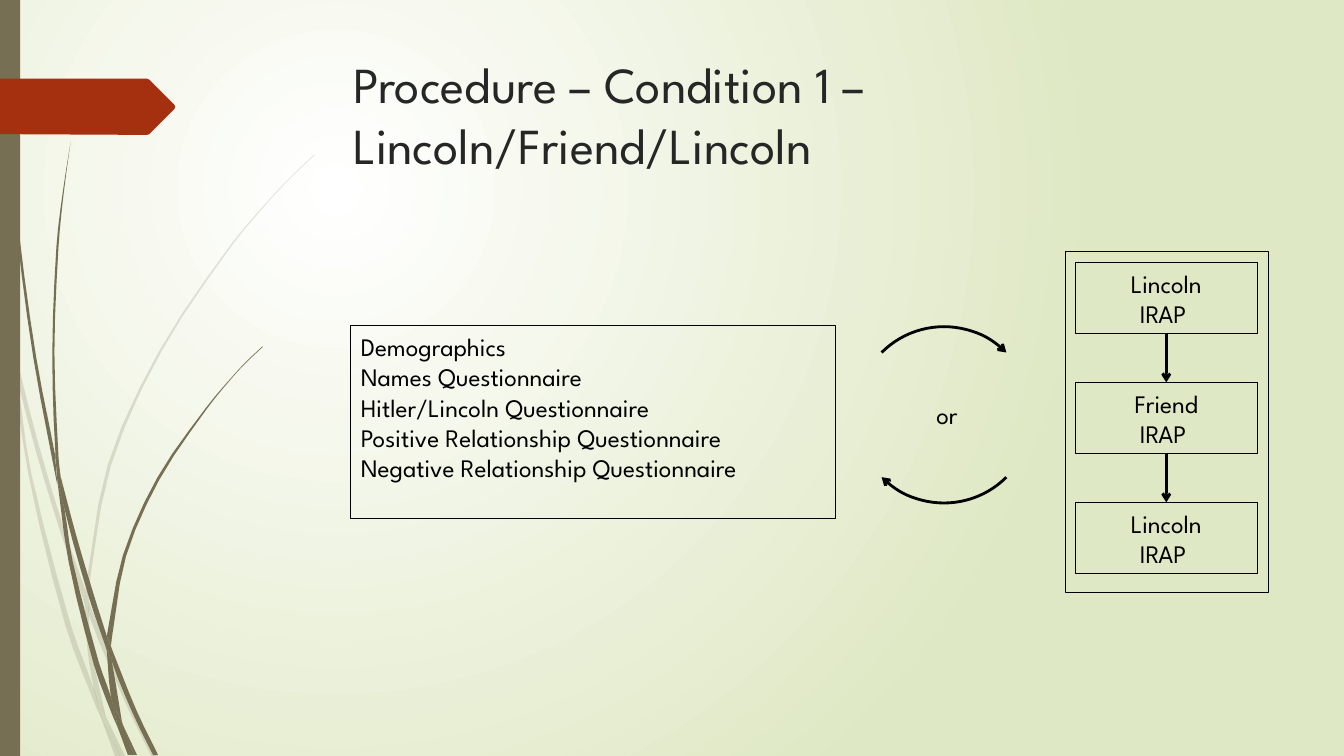
from dataclasses import dataclass
from math import dist

from lxml.etree import SubElement
from pptx import Presentation
from pptx.dml.color import RGBColor
from pptx.enum.shapes import MSO_CONNECTOR, MSO_SHAPE
from pptx.enum.text import MSO_ANCHOR, PP_ALIGN
from pptx.oxml import parse_xml
from pptx.oxml.ns import nsdecls, qn
from pptx.shapes.autoshape import Shape
from pptx.slide import Slide
from pptx.text.text import TextFrame
from pptx.util import Pt

FONT = "League Spartan"
BLACK, OLIVE, RED = "000000", "766F54", "A53010"
Point = tuple[float, float]
Edge = list[Point]


@dataclass
class Area:
    left: float
    top: float
    width: float
    height: float


@dataclass
class Grass:
    """Blades of one opacity, each closed from smooth edges."""
    opacity: int
    blades: list[list[Edge]]


PALE_GRASS = Grass(20, [
    [[(7.9, 252), (6.5, 231.8), (0, 203)], [(0, 215.3), (7.2, 247.7), (7.9, 252)]],
    [[(12.2, 270.7), (25.9, 323.3), (41.8, 375.8), (60.5, 431.3)],
     [(61.2, 421.9), (44.6, 374.4), (26, 311.8), (10.1, 248.4)]],
    [[(63.4, 429.1), (63.4, 439.2), (88.6, 499.7), (108, 540)],
     [(111.6, 540), (91.4, 498.2), (66.2, 437), (63.4, 429.1)]],
    [[(85.7, 540), (89.3, 540)], [(75.6, 511.9)]],
    [[(7.9, 252), (12.2, 270.7), (22.3, 337.7), (50.4, 445.7), (67, 491.8), (71.3, 509),
      (72.7, 514.1)],
     [(72.7, 514.1), (66.2, 499), (46.8, 447.1), (20.2, 338.4), (7.9, 252)]],
    [[(60.5, 431.3), (62.6, 465.1), (67, 491.8), (69.1, 498.2), (75.6, 511.9)],
     [(75.6, 511.9), (65.5, 465.1), (63.4, 439.2)], [(63.4, 437.8), (60.5, 431.3)]],
    [[(63.4, 429.1), (63.4, 420.5), (79.2, 332.6), (115.2, 251.3), (164.9, 176.4),
      (193, 142.6), (208.8, 126), (224.6, 110.9)],
     [(224.6, 110.2), (208.1, 126), (193, 141.8), (164.2, 175.7), (113.8, 250.6),
      (77, 331.9), (61.2, 420.5), (61.2, 421.9)]],
    [[(72.7, 514.1), (82.1, 540)], [(85.7, 540)]],
    [[(63.4, 437.8), (63.4, 439.2)], [(63.4, 429.1), (61.2, 421.9)], [(60.5, 431.3)]],
    [[(67, 491.8), (71.3, 509), (72.7, 514.1), (85.7, 540)], [(75.6, 511.9), (69.1, 498.2)]],
])
DARK_GRASS = Grass(100, [
    [[(2.2, 0), (2.9, 34.6), (5, 79.2), (12.2, 167.8), (23.8, 255.6), (40.3, 343.4),
      (41, 346.3)],
     [(39.6, 329), (39.6, 326.2), (25.9, 255.6), (13.7, 167), (5.8, 78.5), (3.6, 34.6),
      (2.9, 0)]],
    [[(43.2, 339.8), (46.1, 363.6), (63.4, 426.2), (76.3, 464.4)],
     [(76.3, 454.3), (67, 424.8), (54.4, 382.3), (43.2, 339.8)]],
    [[(79.2, 461.5), (79.9, 472.3), (95, 509.8), (109.4, 539.3)],
     [(113, 539.3), (97.9, 508.3), (81.4, 467.3), (79.2, 461.5)]],
    [[(41, 343.4), (46.1, 363.6), (51.8, 400.3), (70.6, 473), (79.2, 497.5), (83.5, 516.2),
      (84.2, 519.8)],
     [(84.2, 519.8), (79.9, 509.8), (67, 474.5), (49, 401), (41, 343.4)]],
    [[(43.2, 339.8), (41.8, 326.2), (38.9, 251.3), (41.8, 176.4), (45.4, 139), (50.4, 101.5)],
     [(50.4, 101.5), (44.6, 139), (40.3, 176.4), (37.4, 251.3), (39.6, 323.3),
      (43.2, 339.8)]],
    [[(95.8, 539.3), (97.9, 539.3)], [(87.8, 517.7)]],
    [[(41, 343.4), (46.1, 363.6)], [(43.2, 339.8), (39.6, 323.3)], [(39.6, 326.2)]],
    [[(79.9, 455.8), (90, 397.4), (113.8, 342.7), (147.6, 292.3), (166.3, 269.3),
      (176.4, 258.5), (187.9, 247.7)],
     [(187.2, 247.7), (176.4, 257.8), (166.3, 268.6), (146.9, 291.6), (112.3, 341.3),
      (87.8, 396.7), (76.3, 454.3)], [(79.2, 461.5)]],
    [[(84.2, 519.8), (91.4, 539.3)], [(94.3, 539.3)]],
    [[(76.3, 464.4), (79.2, 497.5), (83.5, 508.3), (87.8, 517.7)],
     [(87.1, 515.5), (79.9, 472.3), (78.5, 468.7), (76.3, 464.4)]],
    [[(76.3, 464.4), (78.5, 468.7)], [(79.9, 472.3), (79.2, 461.5)], [(76.3, 454.3)]],
    [[(79.2, 497.5), (83.5, 516.2), (84.2, 519.8), (93.6, 539.3)],
     [(95.8, 539.3), (87.8, 517.7), (83.5, 508.3)]],
])
PENNANT = [(0, 56.2), (97.9, 56.2), (105.1, 56.2), (106.6, 56.9), (124.6, 74.9), (125.3, 76.3),
           (124.6, 77.8), (106.6, 95.8), (105.1, 96.3), (97.9, 96.3), (0, 95.8)]
QUESTIONNAIRES = ["Demographics", "Names Questionnaire", "Hitler/Lincoln Questionnaire",
                  "Positive Relationship Questionnaire", "Negative Relationship Questionnaire"]
IRAP_ORDER = ["Lincoln", "Friend", "Lincoln"]
FIRST_IRAP, IRAP_STEP = Area(767.9, 187.4, 130.4, 51.1), 85.7


def color(code: str) -> RGBColor:
    return RGBColor.from_string(code)


def smooth(edge: Edge, steps: int = 3) -> Edge:
    """Run a curve through the points, its slopes weighted by distance."""
    if len(edge) < 3:
        return edge
    around = zip([edge[0], *edge], edge, [*edge[1:], edge[-1]])
    slopes = [[(c - a) / (dist(before, here) + dist(here, after))
               for a, c in zip(before, after)] for before, here, after in around]
    curve = [edge[0]]
    for start, end, leave, arrive in zip(edge, edge[1:], slopes, slopes[1:]):
        span = dist(start, end)
        for t in (step / steps for step in range(1, steps + 1)):
            bend = t * (1 - t) * span
            ease = t * t * (3 - 2 * t)
            curve.append(tuple(p + (q - p) * ease + bend * (m * (1 - t) - n * t)
                               for p, q, m, n in zip(start, end, leave, arrive)))
    return curve


def paint(shape: Shape, fill: str | None = None, line: str | None = None,
          weight: float = 0.75, opacity: int = 100) -> None:
    shape.shadow.inherit = False
    if fill:
        shape.fill.solid()
        shape.fill.fore_color.rgb = color(fill)
        if opacity < 100:
            tint = shape._element.spPr.find(f"{qn('a:solidFill')}/{qn('a:srgbClr')}")
            SubElement(tint, qn("a:alpha"), val=str(opacity * 1000))
    else:
        shape.fill.background()
    if line:
        shape.line.color.rgb, shape.line.width = color(line), Pt(weight)
    else:
        shape.line.fill.background()


def add_outline(page: Slide, points: Edge, fill: str, opacity: int = 100) -> None:
    corners = [(Pt(x), Pt(y)) for x, y in points]
    builder = page.shapes.build_freeform(*corners[0])
    builder.add_line_segments(corners[1:], close=True)
    paint(builder.convert_to_shape(), fill, opacity=opacity)


def add_preset(page: Slide, kind: MSO_SHAPE, area: Area) -> Shape:
    return page.shapes.add_shape(kind, Pt(area.left), Pt(area.top), Pt(area.width), Pt(area.height))


def write(frame: TextFrame, lines: list[str], size: float = 18, ink: str = BLACK,
          align: PP_ALIGN = PP_ALIGN.LEFT, wrap: bool = True) -> None:
    frame.word_wrap = wrap
    for number, line in enumerate(lines):
        para = frame.add_paragraph() if number else frame.paragraphs[0]
        para.alignment = align
        span = para.add_run()
        span.text = line
        span.font.name, span.font.size = FONT, Pt(size)
        span.font.color.rgb = color(ink)


def add_text(page: Slide, area: Area, line: str, size: float, ink: str, wrap: bool) -> None:
    box = page.shapes.add_textbox(Pt(area.left), Pt(area.top), Pt(area.width), Pt(area.height))
    write(box.text_frame, [line], size, ink, wrap=wrap)


def add_frame(page: Slide, area: Area, lines: list[str], align: PP_ALIGN = PP_ALIGN.LEFT,
              room_below: float = 3.6) -> None:
    box = add_preset(page, MSO_SHAPE.RECTANGLE, area)
    paint(box, line=BLACK)
    box.text_frame.vertical_anchor = MSO_ANCHOR.MIDDLE
    box.text_frame.margin_bottom = Pt(room_below)
    write(box.text_frame, lines, align=align)


def add_arrowhead(line) -> None:
    SubElement(line.line._get_or_add_ln(), qn("a:tailEnd"), type="arrow")


def add_down_arrow(page: Slide, x: float, top: float, bottom: float) -> None:
    arrow = page.shapes.add_connector(MSO_CONNECTOR.STRAIGHT, Pt(x), Pt(top), Pt(x), Pt(bottom))
    arrow.line.color.rgb, arrow.line.width = color(BLACK), Pt(2)
    add_arrowhead(arrow)
    SubElement(arrow._element.spPr, qn("a:effectLst"))


def set_background(page: Slide) -> None:
    fill = page.background.fill
    fill.gradient()
    for stop, code in zip(fill.gradient_stops, ["FFFFFF", "DFE8C4"]):
        stop.color.rgb = color(code)
    linear = next(page._element.iter(qn("a:lin")))
    linear.getparent().replace(linear, parse_xml(
        f'<a:path {nsdecls("a")} path="circle">'
        '<a:fillToRect l="50000" t="50000" r="100000" b="100000"/></a:path>'))


def main() -> None:
    deck = Presentation()
    deck.slide_width, deck.slide_height = Pt(960), Pt(540)
    page = deck.slides.add_slide(deck.slide_layouts[6])

    # Backdrop: gradient, grass, side bar and pennant
    set_background(page)
    for grass in (PALE_GRASS, DARK_GRASS):
        for blade in grass.blades:
            outline = [point for edge in blade for point in smooth(edge)]
            add_outline(page, outline, OLIVE, grass.opacity)
    paint(add_preset(page, MSO_SHAPE.RECTANGLE, Area(0, 0, 14.4, 540)), OLIVE)
    add_outline(page, PENNANT, RED)

    # Title
    add_text(page, Area(245.2, 34.6, 702, 100.8),
             "Procedure – Condition 1 – Lincoln/Friend/Lincoln", 36, "262626", True)

    # Either order: two curved arrows
    add_text(page, Area(661.7, 281.5, 30.2, 28.8), "or", 18, BLACK, False)
    for angle in (315, 135):
        arc = add_preset(page, MSO_SHAPE.ARC, Area(611.3, 233.3, 126, 126))
        arc.rotation = angle
        paint(arc, line=BLACK, weight=2)
        add_arrowhead(arc)

    # IRAP sequence
    paint(add_preset(page, MSO_SHAPE.RECTANGLE, Area(761, 179.6, 145, 243.4)), line=BLACK)
    for number, name in enumerate(IRAP_ORDER):
        top = FIRST_IRAP.top + number * IRAP_STEP
        add_frame(page, Area(FIRST_IRAP.left, top, FIRST_IRAP.width, FIRST_IRAP.height),
                  [name, "IRAP "], PP_ALIGN.CENTER)
        if number:
            bottom_above = top - IRAP_STEP + FIRST_IRAP.height
            add_down_arrow(page, FIRST_IRAP.left + FIRST_IRAP.width / 2, bottom_above, top)

    # Questionnaires, with a line of room below
    add_frame(page, Area(250.6, 232.5, 346.2, 138.2), QUESTIONNAIRES, room_below=25.2)
    deck.save("out.pptx")


if __name__ == "__main__":
    main()
